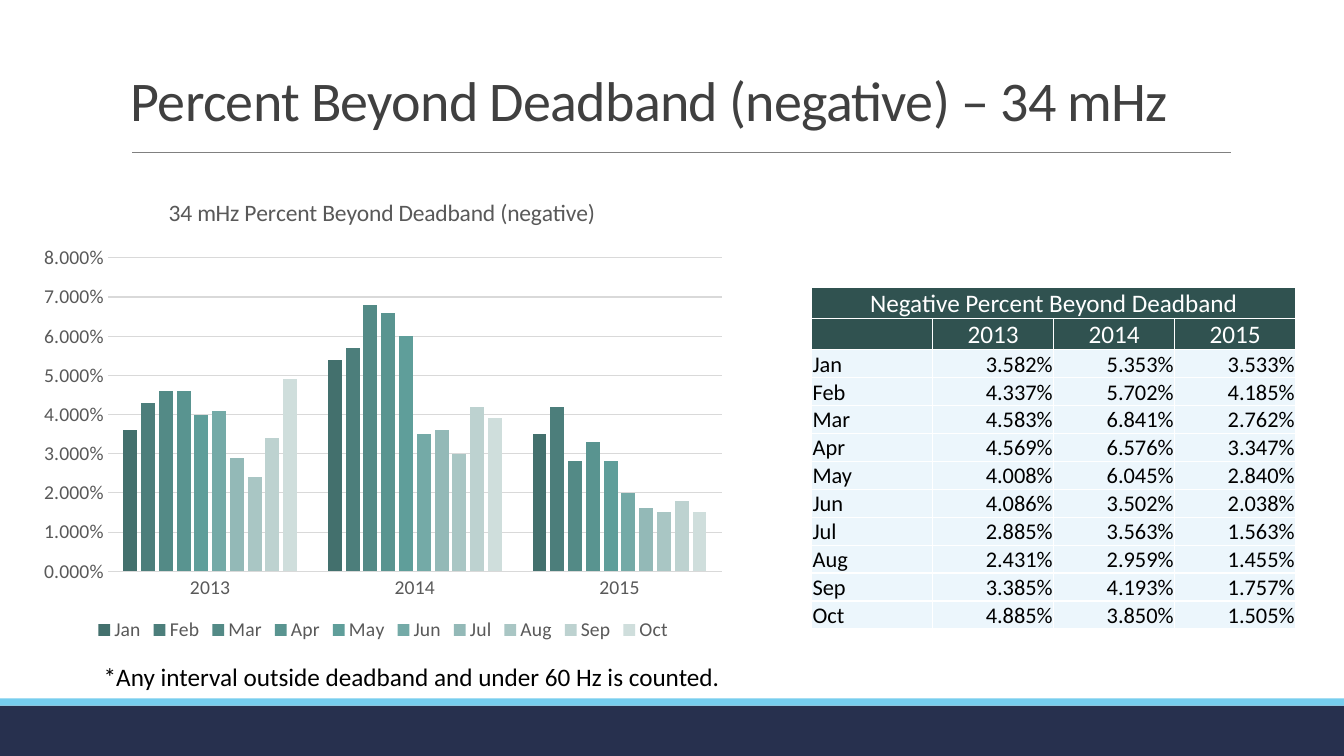
from dataclasses import dataclass

from lxml import etree
from pptx import Presentation
from pptx import oxml
from pptx.chart import data as chart_data
from pptx.dml import color
from pptx.enum import chart as chart_enum, shapes, text
from pptx.oxml import ns
from pptx.util import Inches, Pt


@dataclass(frozen=True)
class Theme:
    font: str = "Calibri"
    navy: str = "27304E"
    sky: str = "76CDEE"
    rule: str = "808080"
    title: str = "404040"
    ink: str = "000000"
    white: str = "FFFFFF"
    label: str = "595959"
    grid: str = "D9D9D9"
    header: str = "305250"
    body: str = "ECF6FC"
    months: tuple = ("43706D", "4C7E7B", "538A86", "599490", "5F9E9A",
                     "74AAA7", "93B9B7", "A9C6C4", "BDD2D0", "CFDEDC")
    title_size: float = 40
    text_size: float = 18
    chart_title_size: float = 16.8
    cell_size: float = 16
    label_size: float = 14


THEME = Theme()
YEARS = ("2013", "2014", "2015")
PERCENTS = {
    "Jan": (3.582, 5.353, 3.533),
    "Feb": (4.337, 5.702, 4.185),
    "Mar": (4.583, 6.841, 2.762),
    "Apr": (4.569, 6.576, 3.347),
    "May": (4.008, 6.045, 2.840),
    "Jun": (4.086, 3.502, 2.038),
    "Jul": (2.885, 3.563, 1.563),
    "Aug": (2.431, 2.959, 1.455),
    "Sep": (3.385, 4.193, 1.757),
    "Oct": (4.885, 3.850, 1.505),
}


def rgb(value):
    return color.RGBColor.from_string(value)


def to_share(percent):
    """Turn a percentage into a fraction of three decimals, halves going up."""
    return int(percent * 10 + 0.5) / 1000


def style_font(font, size, ink):
    font.name = THEME.font
    font.size = Pt(size)
    font.bold = False
    font.color.rgb = rgb(ink)


def add_span(para, words, size, ink):
    span = para.add_run()
    span.text = words
    style_font(span.font, size, ink)
    return span


def add_band(page, top, height, fill):
    band = page.shapes.add_shape(shapes.MSO_SHAPE.RECTANGLE, 0, Inches(top),
                                 Inches(13.33), Inches(height))
    band.shadow.inherit = False
    band.fill.solid()
    band.fill.fore_color.rgb = rgb(fill)
    band.line.fill.background()


def add_rule(page, left, right, y):
    rule = page.shapes.add_connector(shapes.MSO_CONNECTOR.STRAIGHT, Inches(left),
                                     Inches(y), Inches(right), Inches(y))
    rule.line.color.rgb = rgb(THEME.rule)
    rule.line.width = Pt(0.5)
    etree.SubElement(rule._element.spPr, ns.qn("a:effectLst"))


def add_text(page, place, words, size, ink, anchor=text.MSO_ANCHOR.TOP):
    """Add a one-line text box and return its paragraph and run."""
    box = page.shapes.add_textbox(*map(Inches, place))
    box.text_frame.word_wrap = True
    box.text_frame.vertical_anchor = anchor
    para = box.text_frame.paragraphs[0]
    return para, add_span(para, words, size, ink)


def add_title(page):
    para, span = add_text(page, (1.2, 0.31, 11, 1.06),
                          "Percent Beyond Deadband (negative) – 34 mHz",
                          THEME.title_size, THEME.title, text.MSO_ANCHOR.BOTTOM)
    para.line_spacing = 0.85
    span.font._element.set("spc", "-50")


def make_layout(parent, **shares):
    """Drop a chart part's layout and return one set by shares of the chart's size."""
    for old in parent.findall(ns.qn("c:layout")):
        parent.remove(old)
    inner = '<c:layoutTarget val="inner"/>' if "w" in shares else ""
    modes = "".join(f'<c:{axis}Mode val="edge"/>' for axis in "xy")
    sizes = "".join(f'<c:{key} val="{share}"/>' for key, share in shares.items())
    return oxml.parse_xml(f'<c:layout {ns.nsdecls("c")}><c:manualLayout>'
                          f'{inner}{modes}{sizes}</c:manualLayout></c:layout>')


def style_axes(chart):
    for axis in (chart.category_axis, chart.value_axis):
        axis.major_tick_mark = axis.minor_tick_mark = chart_enum.XL_TICK_MARK.NONE
        style_font(axis.tick_labels.font, THEME.label_size, THEME.label)
    values = chart.value_axis
    values.minimum_scale, values.maximum_scale, values.major_unit = 0, 0.08, 0.01
    values.tick_labels.number_format = "0.000%"
    values.tick_labels.number_format_is_linked = False
    values.format.line.fill.background()
    for line in (chart.category_axis.format.line, values.major_gridlines.format.line):
        line.color.rgb = rgb(THEME.grid)
        line.width = Pt(0.75)


def add_month_chart(page):
    data = chart_data.CategoryChartData(number_format="0.000%")
    data.categories = YEARS
    for month, percents in PERCENTS.items():
        data.add_series(month, map(to_share, percents))
    chart = page.shapes.add_chart(
        chart_enum.XL_CHART_TYPE.COLUMN_CLUSTERED, Inches(0.3), Inches(1.77),
        Inches(7), Inches(4.64), data).chart
    style_font(chart.font, THEME.label_size, THEME.ink)

    title = chart.chart_title
    add_span(title.text_frame.paragraphs[0], "34 mHz Percent Beyond Deadband (negative)",
             THEME.chart_title_size, THEME.label)
    title._element.find(ns.qn("c:tx")).addnext(make_layout(title._element, x=0.19, y=0.03))
    plot_area = chart._chartSpace.chart.plotArea
    plot_area.insert(0, make_layout(plot_area, x=0.11, y=0.17, w=0.87, h=0.67))

    style_axes(chart)
    chart.has_legend = True
    chart.legend.position = chart_enum.XL_LEGEND_POSITION.BOTTOM
    chart.legend.include_in_layout = False
    style_font(chart.legend.font, THEME.label_size, THEME.label)

    plot = chart.plots[0]
    plot.gap_width, plot.overlap, plot.vary_by_categories = 219, -27, False
    for series, fill in zip(plot.series, THEME.months):
        series.format.fill.solid()
        series.format.fill.fore_color.rgb = rgb(fill)


def style_cell(cell, fill, anchor):
    cell.margin_left = cell.margin_right = cell.margin_top = Inches(0.01)
    cell.margin_bottom = 0
    cell.vertical_anchor = anchor
    for side in "LRTB":
        cell._tc.get_or_add_tcPr().append(oxml.parse_xml(
            f'<a:ln{side} {ns.nsdecls("a")} w="{Pt(1)}"><a:solidFill>'
            f'<a:srgbClr val="{THEME.white}"/></a:solidFill></a:ln{side}>'))
    cell.fill.solid()
    cell.fill.fore_color.rgb = rgb(fill)


def add_percent_table(page):
    rows = [("Negative Percent Beyond Deadband", "", "", ""), ("", *YEARS)]
    rows += [(month, *(f"{value:.3f}%" for value in percents))
             for month, percents in PERCENTS.items()]
    frame = page.shapes.add_table(len(rows), 4, Inches(8.05), Inches(2.85),
                                  Inches(4.8), Inches(3.39))
    table = frame.table
    table.first_row = table.horz_banding = False
    for row in table.rows:
        row.height = Inches(0.21)
    for r, row in enumerate(rows):
        heading = r < 2
        fill, ink, size, anchor = (
            (THEME.header, THEME.white, THEME.text_size, text.MSO_ANCHOR.MIDDLE) if heading
            else (THEME.body, THEME.ink, THEME.cell_size, text.MSO_ANCHOR.BOTTOM))
        for c, words in enumerate(row):
            cell = table.cell(r, c)
            style_cell(cell, fill, anchor)
            para = cell.text_frame.paragraphs[0]
            if heading:
                para.alignment = text.PP_ALIGN.CENTER
            elif c:
                para.alignment = text.PP_ALIGN.RIGHT
            if words:
                add_span(para, words, size, ink)
    table.cell(0, 0).merge(table.cell(0, 3))


def main():
    deck = Presentation()
    deck.slide_width, deck.slide_height = Inches(13.33), Inches(7.5)
    page = deck.slides.add_slide(deck.slide_layouts[6])
    add_band(page, 7, 0.5, THEME.navy)
    add_band(page, 6.93, 0.07, THEME.sky)
    add_rule(page, 1.31, 12.21, 1.51)
    add_title(page)
    add_text(page, (0.93, 6.51, 10.33, 0.4),
             "*Any interval outside deadband and under 60 Hz is counted.",
             THEME.text_size, THEME.ink)
    add_month_chart(page)
    add_percent_table(page)
    deck.save("out.pptx")


if __name__ == "__main__":
    main()
